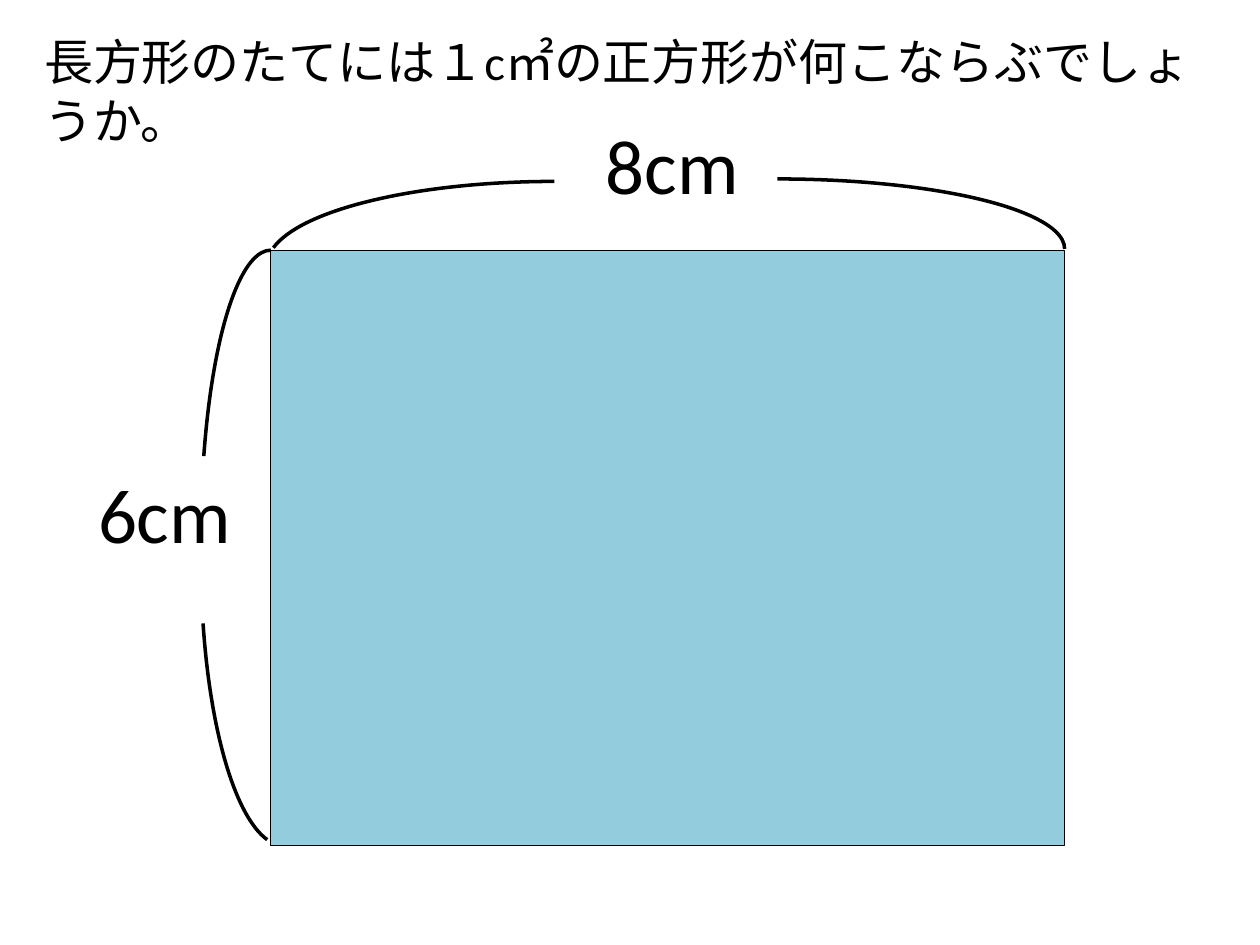
from pptx import Presentation
from pptx import util as u
from pptx.dml import color
from pptx.enum import shapes, text

BLACK = "000000"
LABEL_SIZE = (1.27, 0.84)


def rgb(hex_string):
    """Turn a hex string into a colour."""
    return color.RGBColor.from_string(hex_string)


def inches(box):
    """Turn left, top, width and height into lengths."""
    return [u.Inches(length) for length in box]


def format_text(shape, wording, size, wrap):
    """Write one left-aligned line of text at the top of a shape."""
    frame = shape.text_frame
    frame.text = wording
    frame.word_wrap = wrap
    frame.auto_size = text.MSO_AUTO_SIZE.NONE
    frame.vertical_anchor = text.MSO_ANCHOR.TOP
    paragraph = frame.paragraphs[0]
    paragraph.alignment = text.PP_ALIGN.LEFT
    paragraph.font.name = "Calibri"
    paragraph.font.size = u.Pt(size)
    paragraph.font.color.rgb = rgb(BLACK)


def add_question(slide, box, wording):
    """Place the question in the title placeholder."""
    title = slide.shapes.title
    title.left, title.top, title.width, title.height = inches(box)
    format_text(title, wording, 28, True)


def add_outlined(slide, preset, box, line_width):
    """Add a preset shape with a black line and no shadow."""
    shape = slide.shapes.add_shape(preset, *inches(box))
    shape.shadow.inherit = False
    shape.line.color.rgb = rgb(BLACK)
    shape.line.width = u.Pt(line_width)
    return shape


def add_rectangle(slide, box):
    """Draw the rectangle being measured."""
    rectangle = add_outlined(slide, shapes.MSO_SHAPE.RECTANGLE, box, 0.75)
    rectangle.fill.solid()
    rectangle.fill.fore_color.rgb = rgb("93CDDD")


def add_arc(slide, box, start, end, rotation, flipped):
    """Draw an arc between two angles given in degrees."""
    arc = add_outlined(slide, shapes.MSO_SHAPE.ARC, box, 2)
    arc.fill.background()
    arc.adjustments[0] = start * 0.6
    arc.adjustments[1] = end * 0.6
    arc.rotation = rotation
    if flipped:
        arc.element.spPr.xfrm.set("flipH", "1")


def add_dimension(slide, position, wording, rotation, near_arc, far_arc):
    """Label one side, with an arc reaching to each of its ends."""
    label = slide.shapes.add_textbox(*inches(position + LABEL_SIZE))
    format_text(label, wording, 44, False)
    add_arc(slide, *near_arc, rotation, False)
    add_arc(slide, *far_arc, rotation, True)


def main():
    """Build and save the slide."""
    presentation = Presentation()
    presentation.slide_width = u.Inches(10)
    presentation.slide_height = u.Inches(7.5)
    slide = presentation.slides.add_slide(presentation.slide_layouts[5])
    add_question(slide, (0.25, 0.2, 9.68, 0.57),
                 "長方形のたてには１c㎡の正方形が何こならぶでしょうか。")
    add_rectangle(slide, (2.15, 1.99, 6.3, 4.72))
    add_dimension(slide, (4.71, 0.88), "8cm", 0,
                  ((3.89, 1.42, 4.56, 1.11), 270, 0),
                  ((2.12, 1.44, 4.56, 1.33), 270, 356.44))
    add_dimension(slide, (0.68, 3.65), "6cm", 270,
                  ((-0.13, 3.71, 4.56, 1.11), 320.5, 0),
                  ((-0.02, 3.77, 4.56, 1.33), 308.38, 356.44))
    presentation.save("out.pptx")


if __name__ == "__main__":
    main()
